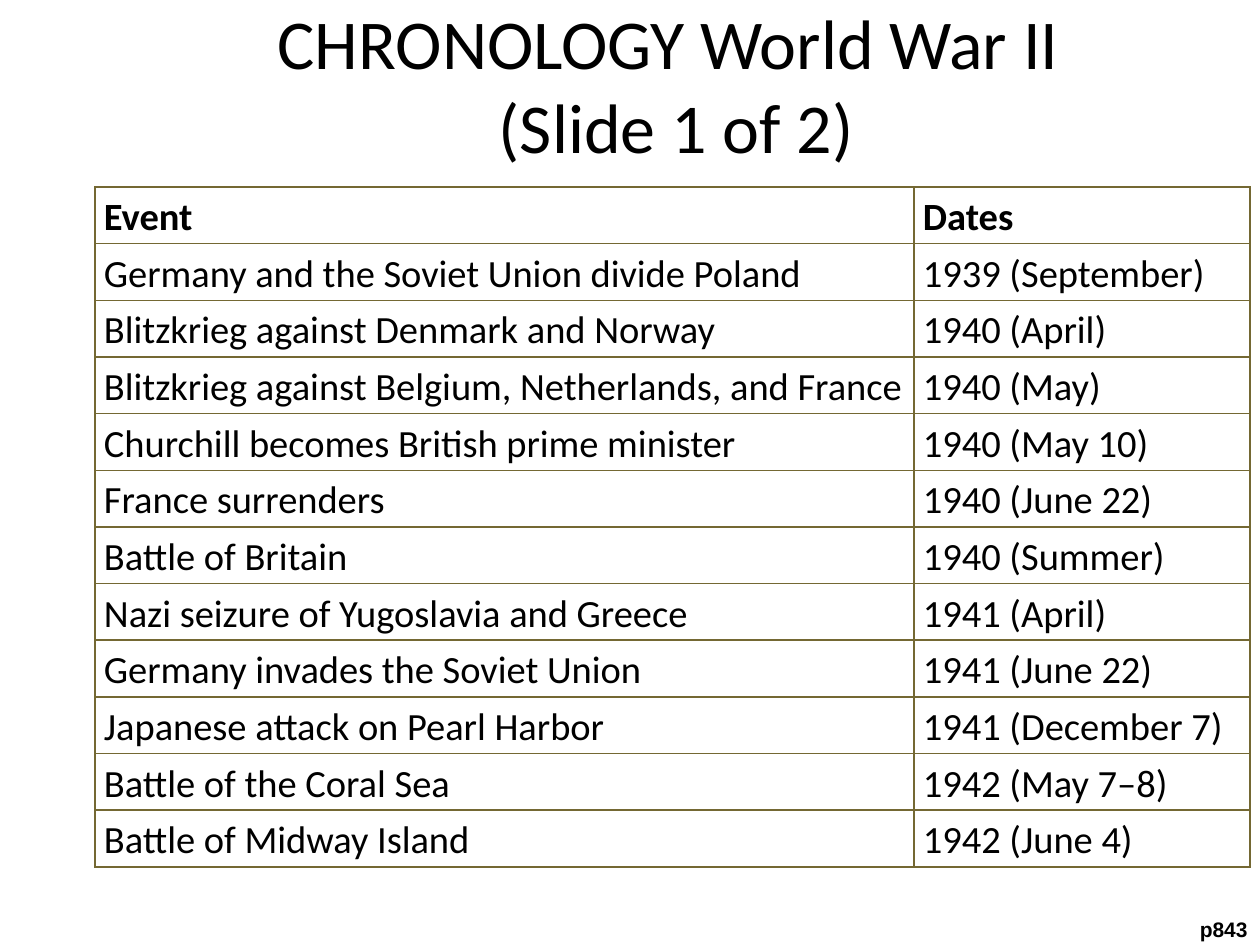
from pptx import Presentation
from pptx import util as u
from pptx.dml.color import RGBColor
from pptx.enum import text
from pptx.oxml import parse_xml
from pptx.oxml.ns import nsdecls

BLACK = RGBColor(0, 0, 0)
WHITE = RGBColor(255, 255, 255)
OLIVE = RGBColor(0x74, 0x68, 0x33)


def px(n):
    return u.Emu(round(n * 914400 / 126))


def write(para, words, size, face="Calibri", bold=False):
    run = para.add_run()
    run.text = words
    font = run.font
    font.name, font.size, font.bold = face, u.Pt(size), bold
    font.color.rgb = BLACK


events = [
    ("Event", "Dates"),
    ("Germany and the Soviet Union divide Poland", "1939 (September)"),
    ("Blitzkrieg against Denmark and Norway", "1940 (April)"),
    ("Blitzkrieg against Belgium, Netherlands, and France", "1940 (May)"),
    ("Churchill becomes British prime minister", "1940 (May 10)"),
    ("France surrenders", "1940 (June 22)"),
    ("Battle of Britain", "1940 (Summer)"),
    ("Nazi seizure of Yugoslavia and Greece", "1941 (April)"),
    ("Germany invades the Soviet Union", "1941 (June 22)"),
    ("Japanese attack on Pearl Harbor", "1941 (December 7)"),
    ("Battle of the Coral Sea", "1942 (May 7–8)"),
    ("Battle of Midway Island", "1942 (June 4)"),
]

deck = Presentation()
deck.slide_width, deck.slide_height = px(1260), px(945)
slide = deck.slides.add_slide(deck.slide_layouts[6])

title = slide.shapes.add_textbox(px(93), px(57), px(1166), px(53)).text_frame
title.word_wrap = True
title.vertical_anchor = text.MSO_ANCHOR.MIDDLE
para = title.paragraphs[0]
para.alignment = text.PP_ALIGN.CENTER
write(para, "CHRONOLOGY World War II ", 40)
para.add_line_break()
write(para, "(Slide 1 of 2)", 40)

page = slide.shapes.add_textbox(px(1181), px(910), px(79), px(38)).text_frame
page.word_wrap = True
para = page.paragraphs[0]
para.alignment = text.PP_ALIGN.RIGHT
write(para, "p843", 12, "Arial", True)

table = slide.shapes.add_table(
    len(events), 2, px(95), px(187), px(1155), px(680)).table
table.first_row = table.horz_banding = False
for col, width in zip(table.columns, (819, 336)):
    col.width = px(width)

for r, event in enumerate(events):
    for c, words in enumerate(event):
        cell = table.cell(r, c)
        cell.margin_left = cell.margin_right = px(9)
        cell.margin_top = cell.margin_bottom = 0
        para = cell.text_frame.paragraphs[0]
        para.line_spacing = 1.15
        write(para, words, 22, bold=r == 0)
        props = cell._tc.get_or_add_tcPr()
        for side in "LRTB":
            props.append(parse_xml(
                f'<a:ln{side} {nsdecls("a")} w="12700"><a:solidFill>'
                f'<a:srgbClr val="{OLIVE}"/></a:solidFill></a:ln{side}>'))
        cell.fill.solid()
        cell.fill.fore_color.rgb = WHITE

deck.save("out.pptx")
